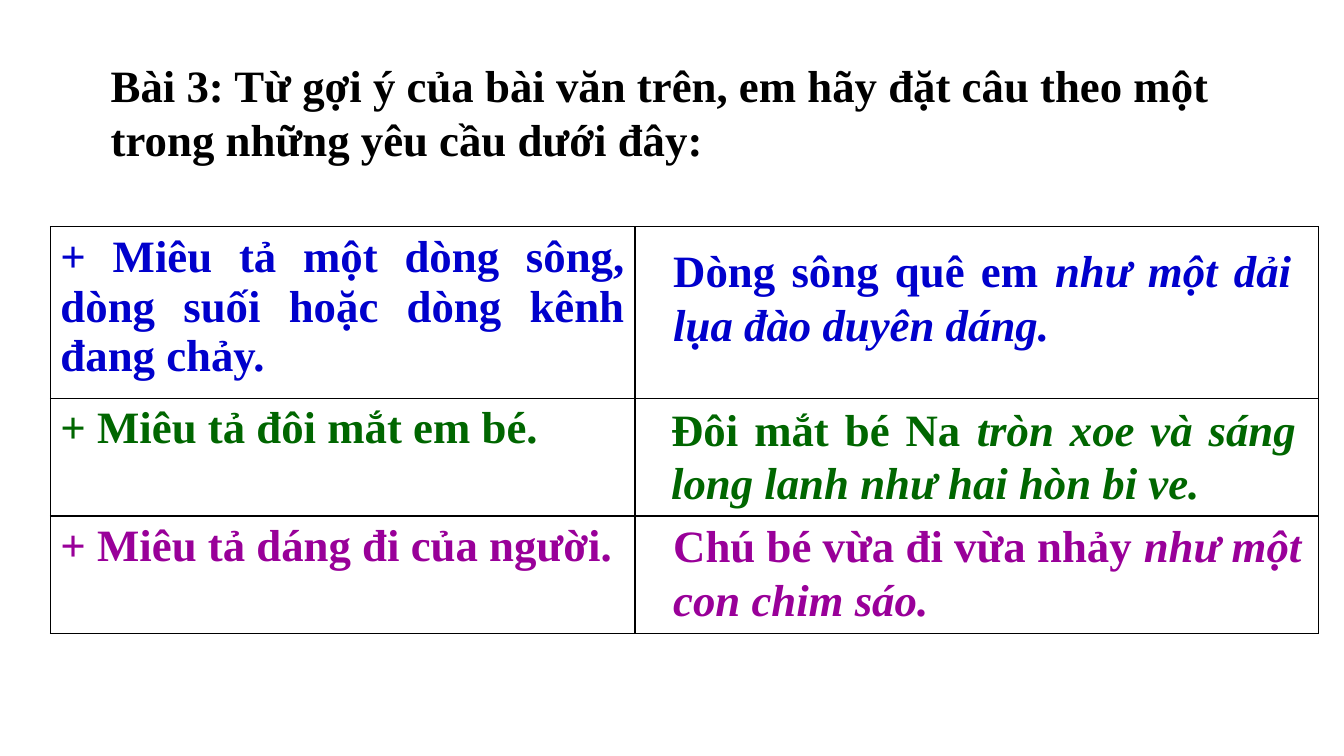
from dataclasses import dataclass

from pptx import Presentation
from pptx.dml.color import RGBColor
from pptx.enum.text import MSO_AUTO_SIZE, PP_ALIGN
from pptx.oxml import parse_xml
from pptx.oxml.ns import nsdecls
from pptx.util import Pt


@dataclass(frozen=True)
class Theme:
    font: str = "Times New Roman"
    size: float = 32
    cell_line: float = 35.7
    box_line: float = 38.5
    black: str = "000000"
    white: str = "FFFFFF"
    blue: str = "0000CC"
    green: str = "006600"
    purple: str = "990099"


THEME = Theme()
COLUMN_WIDTHS = (417.6, 488.2)
ROW_HEIGHTS = (122.4, 84.2, 84.2)
TITLE = "Bài 3: Từ gợi ý của bài văn trên, em hãy đặt câu theo một trong những yêu cầu dưới đây:"

# Request, its alignment, colour, answer start, comparison, answer box (left, top, width)
EXERCISES = (
    ("+ Miêu tả một dòng sông, dòng suối hoặc dòng kênh đang chảy.", PP_ALIGN.JUSTIFY,
     THEME.blue, "Dòng sông quê em", " như một dải lụa đào duyên dáng.", (473.8, 169.9, 455.8)),
    ("+ Miêu tả đôi mắt em bé.", PP_ALIGN.LEFT,
     THEME.green, "Đôi mắt bé Na", " tròn xoe và sáng long lanh như hai hòn bi ve.",
     (472.3, 283, 460.8)),
    ("+ Miêu tả dáng đi của người.", PP_ALIGN.LEFT,
     THEME.purple, "Chú bé vừa đi vừa nhảy ", "như một con chim sáo.", (473.8, 366.5, 463)),
)


def write_text(frame, text, italic_text="", color=THEME.black, align=PP_ALIGN.LEFT,
               line=THEME.box_line):
    """Write one bold paragraph, with an optional italic ending."""
    paragraph = frame.paragraphs[0]
    paragraph.alignment = align
    paragraph.line_spacing = Pt(line)
    for content, italic in ((text, False), (italic_text, True)):
        if content:
            run = paragraph.add_run()
            run.text = content
            run.font.name = THEME.font
            run.font.size = Pt(THEME.size)
            run.font.bold = True
            run.font.italic = italic
            run.font.color.rgb = RGBColor.from_string(color)


def add_text_box(slide, left, top, width, text, **text_format):
    height = 2 * THEME.box_line + 7.2
    shape = slide.shapes.add_textbox(Pt(left), Pt(top), Pt(width), Pt(height))
    shape.text_frame.word_wrap = True
    shape.text_frame.auto_size = MSO_AUTO_SIZE.SHAPE_TO_FIT_TEXT
    write_text(shape.text_frame, text, **text_format)


def style_cell(cell):
    """Give a cell thin borders on all sides and a plain fill."""
    properties = cell._tc.get_or_add_tcPr()
    for side in ("lnL", "lnR", "lnT", "lnB"):
        properties.append(parse_xml(
            f'<a:{side} {nsdecls("a")} w="{Pt(1)}"><a:solidFill>'
            f'<a:srgbClr val="{THEME.black}"/></a:solidFill></a:{side}>'))
    cell.fill.solid()
    cell.fill.fore_color.rgb = RGBColor.from_string(THEME.white)


def add_request_table(slide):
    table = slide.shapes.add_table(
        len(ROW_HEIGHTS), len(COLUMN_WIDTHS), Pt(36), Pt(162),
        Pt(sum(COLUMN_WIDTHS)), Pt(sum(ROW_HEIGHTS))).table
    for column, width in zip(table.columns, COLUMN_WIDTHS):
        column.width = Pt(width)
    for row, height in zip(table.rows, ROW_HEIGHTS):
        row.height = Pt(height)
    for cell in table.iter_cells():
        style_cell(cell)
    for index, (request, align, color, *_) in enumerate(EXERCISES):
        write_text(table.cell(index, 0).text_frame, request, color=color, align=align,
                   line=THEME.cell_line)


def main():
    presentation = Presentation()
    presentation.slide_width, presentation.slide_height = Pt(960), Pt(540)
    slide = presentation.slides.add_slide(presentation.slide_layouts[6])

    # Requests on the left
    add_request_table(slide)

    # Heading
    add_text_box(slide, 72, 37.4, 838.8, TITLE)

    # Sample answers on the right
    for _, _, color, start, comparison, place in EXERCISES:
        add_text_box(slide, *place, start, italic_text=comparison, color=color,
                     align=PP_ALIGN.JUSTIFY)

    presentation.save("out.pptx")


if __name__ == "__main__":
    main()
